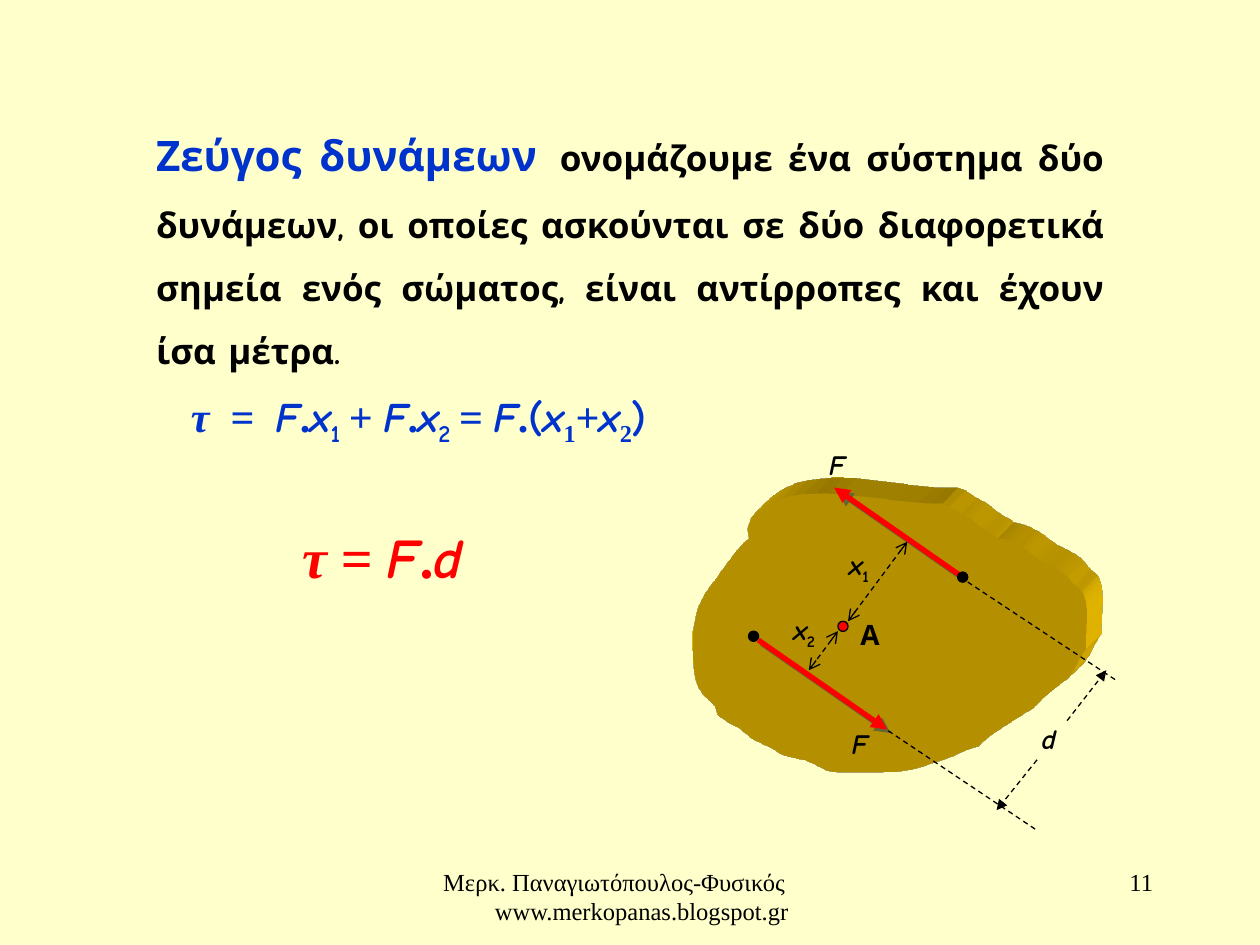
from pptx import Presentation
from pptx import util as u
from pptx.dml.color import RGBColor
from pptx.enum import dml, shapes, text
from pptx.oxml import parse_xml
from pptx.oxml.ns import nsdecls, qn

Pt = u.Pt
CREAM = RGBColor(0xFF, 0xFF, 0xCC)
BLACK = RGBColor(0, 0, 0)
BLUE = RGBColor(0, 0x33, 0xCC)
RED = RGBColor(0xFF, 0, 0)
GOLD = RGBColor(0xFF, 0xCC, 0)
COMIC, TIMES = "Comic Neue", "Times New Roman"
ALIGN = text.PP_ALIGN
SHADOW = ('<a:effectLst %s><a:outerShdw dist="35560" dir="2700000">'
          '<a:srgbClr val="666633"/></a:outerShdw></a:effectLst>')
NO_EFFECT = "<a:effectLst %s/>"
SCENE = ('<a:scene3d %s><a:camera prst="legacyObliqueTopRight"/>'
         '<a:lightRig rig="legacyFlat3" dir="b"/></a:scene3d>')
DEPTH = ('<a:sp3d %s extrusionH="{}" prstMaterial="legacyMatte"><a:extrusionClr>'
         '<a:srgbClr val="{}"/></a:extrusionClr></a:sp3d>')


def run(value, **fmt):
    """Pair a piece of text with its format."""
    return value, fmt


def var(value):
    return run(value, italic=True)


def sub(value, font=COMIC):
    return run(value, font=font, base=-25)


def sign(value, **fmt):
    return run(value, font=TIMES, **fmt)


class Deck:
    def __init__(self, prs):
        self.s = prs.slides.add_slide(prs.slide_layouts[6])
        self.s.background.fill.solid()
        self.s.background.fill.fore_color.rgb = CREAM

    def add_run(self, p, value, size=16, color=BLACK, font=COMIC, bold=True,
                italic=False, base=0, gap=0):
        r = p.add_run()
        r.text = value
        f = r.font
        f.size, f.name, f.bold, f.italic = Pt(size), font, bold, italic
        f.color.rgb = color
        rPr = r._r.get_or_add_rPr()
        if base:
            rPr.set("baseline", str(base * 1000))
        if gap:
            rPr.set("spc", str(gap * 100))

    def text(self, box, runs, align=ALIGN.LEFT, spacing=None, hanging=0, **common):
        tf = self.s.shapes.add_textbox(*map(Pt, box)).text_frame
        tf.word_wrap = True
        p = tf.paragraphs[0]
        p.alignment = align
        if spacing:
            p.line_spacing = spacing
        if hanging:
            pPr = p._p.get_or_add_pPr()
            pPr.set("marL", str(Pt(hanging)))
            pPr.set("indent", str(-Pt(hanging)))
        for value, fmt in runs:
            self.add_run(p, value, **{**common, **fmt})

    def line(self, start, end, color=BLACK, width=0.75, dash=True,
             head=None, tail=None, effect=NO_EFFECT):
        sp = self.s.shapes.add_connector(
            shapes.MSO_CONNECTOR.STRAIGHT, *map(Pt, start + end))
        sp.line.color.rgb, sp.line.width = color, Pt(width)
        if dash:
            sp.line.dash_style = dml.MSO_LINE.DASH
        ln = sp.line._get_or_add_ln()
        for tag, kind in (("headEnd", head), ("tailEnd", tail)):
            if kind:
                ln.append(parse_xml('<a:%s %s type="%s"/>' % (tag, nsdecls("a"), kind)))
        sp._element.find(qn("p:spPr")).append(parse_xml(effect % nsdecls("a")))

    def dot(self, x, y, color=BLACK, size=5.8):
        sp = self.s.shapes.add_shape(
            shapes.MSO_SHAPE.OVAL, *map(Pt, (x, y, size, size)))
        sp.shadow.inherit = False
        sp.fill.solid()
        sp.fill.fore_color.rgb = color
        sp.line.color.rgb, sp.line.width = BLACK, Pt(0.75)

    def body(self, start, curves, color, depth):
        """Extruded solid bounded by cubic curves."""
        points = [start] + [c[i:i + 2] for c in curves for i in (0, 2, 4)]
        points = [(Pt(x), Pt(y)) for x, y in points]
        builder = self.s.shapes.build_freeform(*points[0])
        builder.add_line_segments(points[1:], close=True)
        sp = builder.convert_to_shape()
        sp.shadow.inherit = False
        sp.fill.solid()
        sp.fill.fore_color.rgb = color
        sp.line.fill.background()
        spPr = sp._element.spPr
        path = next(spPr.iter(qn("a:path")))
        lines = path.findall(qn("a:lnTo"))
        for i in range(0, len(lines), 3):
            curve = parse_xml("<a:cubicBezTo %s/>" % nsdecls("a"))
            lines[i].addprevious(curve)
            for ln in lines[i:i + 3]:
                curve.append(ln[0])
                path.remove(ln)
        spPr.append(parse_xml(SCENE % nsdecls("a")))
        spPr.append(parse_xml(DEPTH.format(Pt(depth), color) % nsdecls("a")))


# Each row holds two control points and an end point
OUTLINE = [
    (421.9, 312.5, 417.6, 319.7, 412.6, 326.2),
    (409, 331.9, 403.9, 337, 401, 343.4),
    (398.2, 348.5, 397.4, 355.7, 396, 361.4),
    (396.7, 374.4, 393.8, 392.4, 406.8, 401),
    (407.5, 401.8, 409, 403.2, 409, 404.6),
    (409.7, 405.4, 409.7, 406.8, 410.4, 408.2),
    (412.6, 410.4, 420.5, 415.4, 423.4, 416.2),
    (429.8, 422.6, 432.7, 423.4, 440.6, 427),
    (443.5, 428.4, 446.4, 431.3, 450, 432),
    (452.2, 432.7, 458.6, 433.4, 460.8, 434.2),
    (478.8, 442.1, 466.6, 439.2, 480.2, 441.4),
    (491, 441.4, 502.6, 441.4, 513.4, 440.6),
    (523.4, 439.9, 535.7, 434.9, 545, 432),
    (549.4, 429.1, 554.4, 427.7, 559.4, 426.2),
    (565.9, 419, 575.3, 414, 583.2, 409),
    (585.4, 407.5, 588.2, 406.1, 590.4, 404.6),
    (596.9, 397.4, 603.4, 392.4, 610.6, 387.4),
    (614.9, 382.3, 616.3, 375.8, 620.6, 370.8),
    (619.9, 360, 623.5, 347.8, 618.5, 338.4),
    (617, 336.2, 614.9, 335.5, 613.4, 333.4),
    (605.5, 323.3, 601.2, 324.7, 591.8, 318.2),
    (588.2, 315.4, 586.1, 313.2, 582.5, 311.8),
    (578.2, 309.6, 574.6, 308.2, 570.2, 307.4),
    (567.4, 304.6, 563.8, 303.8, 560.2, 301),
    (556.6, 298.1, 554.4, 295.9, 549.4, 293.8),
    (541.4, 288.7, 545, 290.2, 538.6, 288),
    (502.6, 288.7, 456.5, 270, 429.8, 295.2),
    (427, 304.6, 427, 299.5, 428.4, 308.2),
]


def main():
    prs = Presentation()
    prs.slide_width, prs.slide_height = Pt(720), Pt(540)
    d = Deck(prs)

    # Footer and page number
    d.text((246.2, 491.8, 228.2, 36),
           [run("Μερκ. Παναγιωτόπουλος-Φυσικός www.merkopanas.blogspot.gr")],
           hanging=29.5, size=14, font=TIMES, bold=False)
    d.text((516.2, 491.8, 149.8, 36), [run("11")], align=ALIGN.RIGHT,
           size=14, font=TIMES, bold=False)

    # Definition
    d.text((82.1, 43.2, 555.8, 138.2),
           [run("Ζεύγος δυνάμεων", size=24, color=BLUE), run(" ", size=32),
            run("ονομάζουμε ένα σύστημα δύο δυνάμεων, οι οποίες ασκούνται σε "
                "δύο διαφορετικά σημεία ενός σώματος, είναι αντίρροπες και "
                "έχουν ίσα μέτρα.")],
           align=ALIGN.JUSTIFY, spacing=1.5, size=20)

    # Solid body with its pivot
    d.body((428.4, 308.2), OUTLINE, GOLD, depth=25.5)
    d.dot(478.8, 355, RED)

    # Forces
    for start, end in (((550.1, 329.8), (476.6, 278.6)),
                       ((433.4, 365.8), (506.9, 416.9))):
        d.line(start, end, RED, 3, dash=False, tail="triangle", effect=SHADOW)

    # Lever arms, lines of action and distance
    d.line((484.6, 355), (518.4, 309.6), head="arrow", tail="arrow")
    d.line((478.8, 360.7), (462.2, 383), head="arrow", tail="arrow")
    d.line((553, 332.6), (637.9, 388.8))
    d.line((507.6, 417.6), (592.6, 474.5))
    d.line((592.6, 434.2), (569.5, 463), tail="triangle")
    d.line((609.8, 411.8), (632.2, 383), tail="triangle")

    # Labels
    for x, y, width, runs in (
            (484.6, 349.2, 22.3, [run("Α")]),
            (478.1, 309.6, 33.1, [var("x"), sub("1")]),
            (446.4, 346.3, 31.7, [var("x"), sub("2")]),
            (466.6, 252, 28.1, [var("F")]),
            (479.5, 411.8, 28.1, [var("F")]),
            (588.2, 409, 28.1, [var("d")])):
        d.text((x, y, width, 26.6), runs)

    # Formulas
    d.text((160.6, 295.2, 115.9, 46.1),
           [sign("τ", italic=True), sign(" = "), var("F"), sign("."), var("d")],
           align=ALIGN.CENTER, size=32, color=RED)
    d.text((83.5, 219.6, 311.8, 36),
           [sign("τ ", italic=True, gap=3), sign("= ", gap=3),
            var("F"), sign("."), var("x"), sub("1 "), sign("+ "),
            var("F"), sign("."), var("x"), sub("2 "), sign("= "),
            var("F"), sign("."), run("("), var("x"), sub("1", TIMES), sign("+"),
            var("x"), sub("2", TIMES), run(")")],
           align=ALIGN.CENTER, size=24, color=BLUE)

    # Points of application
    d.dot(547.2, 326.9)
    d.dot(427.7, 360.7)

    prs.save("out.pptx")


if __name__ == "__main__":
    main()
